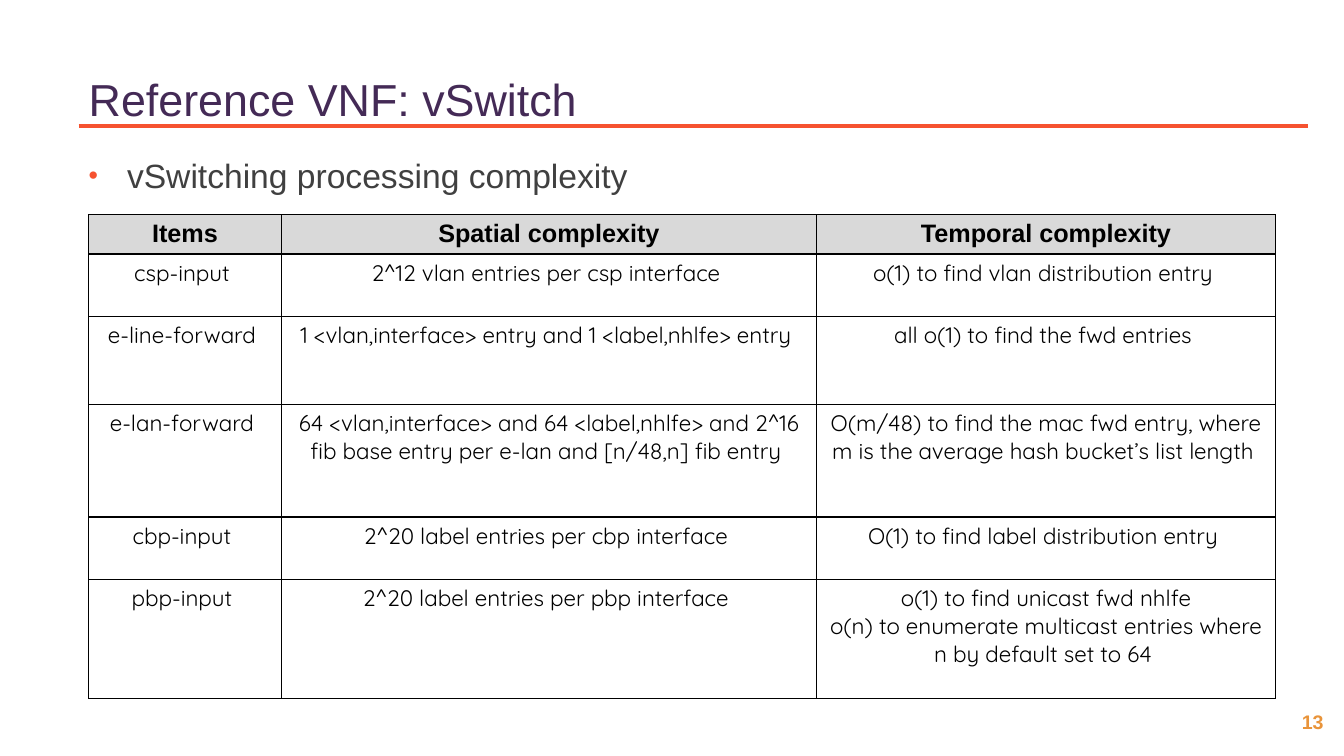
from lxml import etree
from pptx import Presentation
from pptx.dml.color import RGBColor
from pptx.enum.shapes import MSO_CONNECTOR
from pptx.enum.text import MSO_ANCHOR, MSO_AUTO_SIZE, PP_ALIGN
from pptx.oxml.ns import qn
from pptx.util import Emu, Pt

LEFT, CENTER = PP_ALIGN.LEFT, PP_ALIGN.CENTER
TOP, MIDDLE = MSO_ANCHOR.TOP, MSO_ANCHOR.MIDDLE
NO_FIT = MSO_AUTO_SIZE.NONE
STRAIGHT = MSO_CONNECTOR.STRAIGHT

TITLE = "Reference VNF: vSwitch"
POINT = "vSwitching processing complexity"
PAGE = "13"
ROWS = [
    ("Items", "Spatial complexity", "Temporal complexity"),
    ("csp-input ", "2^12 vlan entries per csp interface ",
     "o(1) to find vlan distribution entry "),
    ("e-line-forward ", "1 <vlan,interface> entry and 1 <label,nhlfe> entry ",
     "all o(1) to find the fwd entries "),
    ("e-lan-forward ",
     "64 <vlan,interface> and 64 <label,nhlfe> and 2^16 fib base entry "
     "per e-lan and [n/48,n] fib entry ",
     "O(m/48) to find the mac fwd entry, where m is the average hash "
     "bucket’s list length "),
    ("cbp-input ", "2^20 label entries per cbp interface ",
     "O(1) to find label distribution entry "),
    ("pbp-input ", "2^20 label entries per pbp interface ",
     "o(1) to find unicast fwd nhlfe\v"
     "o(n) to enumerate multicast entries where n by default set to 64 "),
]
WIDTHS = [191, 531, 455]
HEIGHTS = [39, 62, 87, 112, 62, 118]

BLACK, WHITE, GREY = "000000", "FFFFFF", "D9D9D9"
ORANGE, PURPLE, DARK, AMBER = "F65230", "442A56", "404040", "E9943A"


def px(n):
    """Turn px into EMU, at 100 px to the inch."""
    return Emu(n * 9144)


def color(code):
    return RGBColor.from_string(code)


def place(shape, x, y, w, h):
    shape.left, shape.top = px(x), px(y)
    shape.width, shape.height = px(w), px(h)


def style(frame, size, code, align, font="Arial", bold=False):
    for para in frame.paragraphs:
        para.alignment = align
        for run in para.runs:
            run.font.name, run.font.size = font, Pt(size)
            run.font.bold = bold
            run.font.color.rgb = color(code)


def border(cell, code):
    props = cell._tc.get_or_add_tcPr()
    for side in ("lnL", "lnR", "lnT", "lnB"):
        line = etree.SubElement(props, qn("a:" + side), w=str(Pt(1)))
        fill = etree.SubElement(line, qn("a:solidFill"))
        etree.SubElement(fill, qn("a:srgbClr"), val=code)


def bullet(para, code, indent):
    props = para._p.get_or_add_pPr()
    props.set("marL", str(px(indent)))
    props.set("indent", str(px(-indent)))
    tint = etree.SubElement(props, qn("a:buClr"))
    etree.SubElement(tint, qn("a:srgbClr"), val=code)
    etree.SubElement(props, qn("a:buSzPct"), val="80000")
    etree.SubElement(props, qn("a:buFont"), typeface="Arial")
    etree.SubElement(props, qn("a:buChar"), char="•")


deck = Presentation()
deck.slide_width, deck.slide_height = px(1333), px(750)
slide = deck.slides.add_slide(deck.slide_layouts[1])
shapes = slide.shapes

rule = shapes.add_connector(STRAIGHT, px(78), px(125), px(1297), px(125))
rule.line.color.rgb = color(ORANGE)
rule.line.width = Pt(2.25)
etree.SubElement(rule._element.spPr, qn("a:effectLst"))

title, body = slide.placeholders
for holder, text, box, anchor, size, code in (
    (title, TITLE, (78, 59, 864, 77), MIDDLE, 32, PURPLE),
    (body, POINT, (78, 149, 599, 64), TOP, 24, DARK),
):
    place(holder, *box)
    frame = holder.text_frame
    frame.text = text
    frame.auto_size = NO_FIT
    frame.vertical_anchor = anchor
    style(frame, size, code, LEFT)

point = body.text_frame.paragraphs[0]
bullet(point, ORANGE, 38)
point.space_before, point.space_after = Pt(0), Pt(6)

table = shapes.add_table(len(ROWS), len(WIDTHS), px(88), px(213),
                         px(sum(WIDTHS)), px(sum(HEIGHTS))).table
table.horz_banding = False
for col, width in zip(table.columns, WIDTHS):
    col.width = px(width)
for r, (row, height) in enumerate(zip(ROWS, HEIGHTS)):
    table.rows[r].height = px(height)
    for c, text in enumerate(row):
        cell = table.cell(r, c)
        border(cell, BLACK)
        cell.fill.solid()
        cell.fill.fore_color.rgb = color(WHITE if r else GREY)
        cell.text_frame.text = text
        if r:
            style(cell.text_frame, 16, BLACK, CENTER, "Quicksand")
        else:
            style(cell.text_frame, 18, BLACK, CENTER, bold=True)

page = shapes.add_textbox(px(1271), px(699), px(62), px(34)).text_frame
page.word_wrap = True
page.text = PAGE
style(page, 14, AMBER, CENTER, bold=True)

deck.save("out.pptx")
